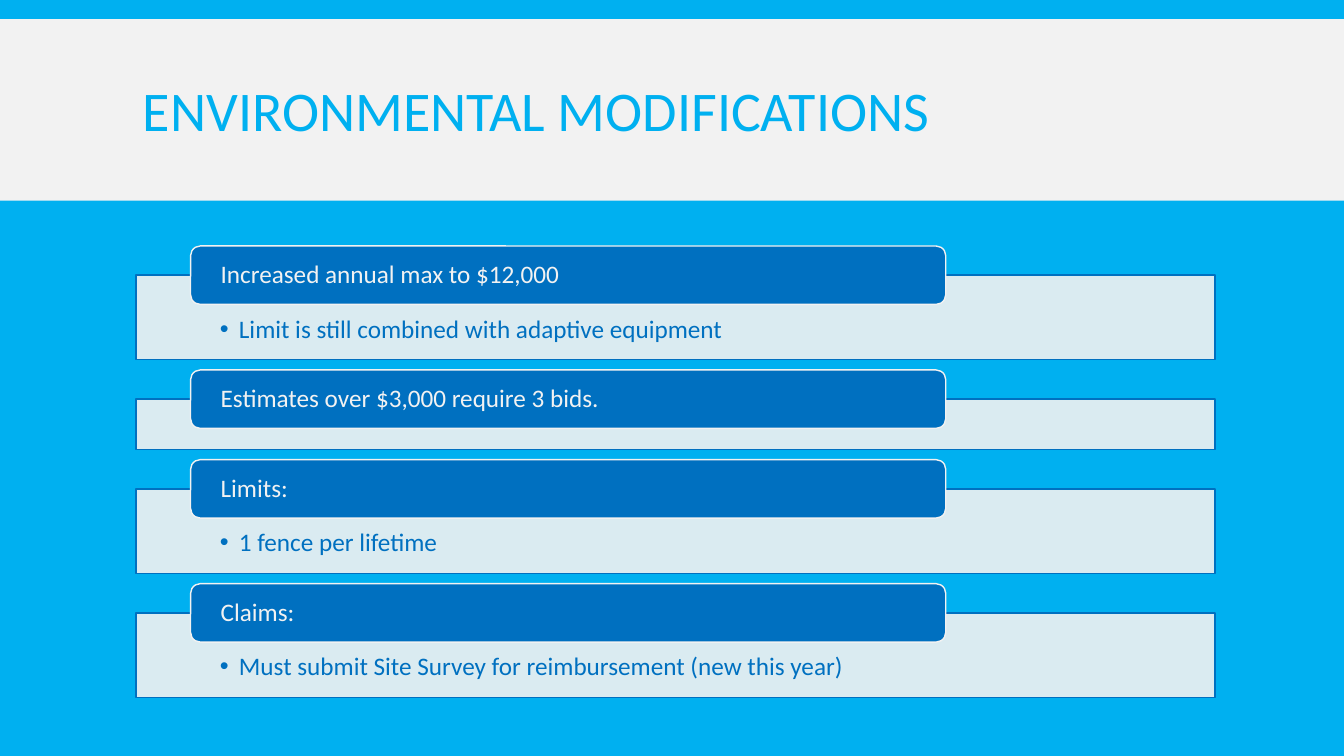
from lxml import etree
from pptx import Presentation
from pptx.dml.color import RGBColor
from pptx.enum.shapes import MSO_SHAPE
from pptx.enum.text import MSO_ANCHOR, PP_ALIGN
from pptx.oxml.ns import qn
from pptx.util import Inches, Pt

RECT, ROUND = MSO_SHAPE.RECTANGLE, MSO_SHAPE.ROUNDED_RECTANGLE
TOP, MIDDLE = MSO_ANCHOR.TOP, MSO_ANCHOR.MIDDLE
LEFT = PP_ALIGN.LEFT

TITLE = "ENVIRONMENTAL MODIFICATIONS"
ITEMS = [
    ("Increased annual max to $12,000",
     "Limit is still combined with adaptive equipment"),
    ("Estimates over $3,000 require 3 bids.", None),
    ("Limits:", "1 fence per lifetime"),
    ("Claims:", "Must submit Site Survey for reimbursement (new this year)"),
]
COLORS = {"sky": "00B0F0", "pale": "F2F2F2", "blue": "0070C0"}
FONT = "Calibri"

BOX_X, BOX_W, FIRST_Y = 1.35, 10.7, 2.73
TALL, SHORT, GAP = 0.84, 0.5, 0.39
TAB_X, TAB_W, TAB_H, RISE = 1.89, 7.49, 0.58, 0.29


def color(name):
    return RGBColor.from_string(COLORS[name])


def add_block(slide, kind, area, fill, line=None):
    block = slide.shapes.add_shape(kind, *map(Inches, area))
    block.shadow.inherit = False
    block.fill.solid()
    block.fill.fore_color.rgb = color(fill)
    if line:
        block.line.color.rgb = color(line)
        block.line.width = Pt(1)
    else:
        block.line.fill.background()
    return block


def set_text(shape, text, size, ink, insets, anchor=MIDDLE, spacing=0.9):
    """Write one left-aligned paragraph; insets run left, top, right, bottom."""
    frame = shape.text_frame
    frame.text = text
    frame.word_wrap = True
    frame.vertical_anchor = anchor
    (frame.margin_left, frame.margin_top,
     frame.margin_right, frame.margin_bottom) = map(Inches, insets)
    para = frame.paragraphs[0]
    para.alignment = LEFT
    para.line_spacing = spacing
    font = para.runs[0].font
    font.name, font.size, font.color.rgb = FONT, Pt(size), color(ink)
    return para


def add_bullet(para):
    props = para._p.get_or_add_pPr()
    props.set("marL", str(Inches(0.19)))
    props.set("indent", str(-Inches(0.19)))
    etree.SubElement(props, qn("a:buFont")).set("typeface", "Arial")
    etree.SubElement(props, qn("a:buChar")).set("char", "•")


def set_alpha(shape, percent):
    tint = shape._element.spPr.find(qn("a:solidFill"))[0]
    etree.SubElement(tint, qn("a:alpha")).set("val", str(percent * 1000))


def add_item(slide, y, height, head, detail):
    box = add_block(slide, RECT, (BOX_X, y, BOX_W, height), "pale", "blue")
    set_alpha(box, 90)
    if detail:
        add_bullet(set_text(box, detail, 18, "blue",
                            (0.83, 0.41, 0.83, 0.14), TOP))
    tab = add_block(slide, ROUND, (TAB_X, y - RISE, TAB_W, TAB_H),
                    "blue", "pale")
    set_text(tab, head, 18, "pale", (0.27, 0, 0.27, 0))


def main():
    deck = Presentation()
    deck.slide_width, deck.slide_height = Inches(13.33), Inches(7.5)
    slide = deck.slides.add_slide(deck.slide_layouts[6])
    slide.background.fill.solid()
    slide.background.fill.fore_color.rgb = color("sky")

    add_block(slide, RECT, (0, 0.19, 13.33, 1.8), "pale")
    title = slide.shapes.add_textbox(*map(Inches, (1.32, 0.31, 10.7, 1.65)))
    set_text(title, TITLE, 40, "sky", (0.1, 0.05, 0.1, 0.05), spacing=0.85)

    y = FIRST_Y
    for head, detail in ITEMS:
        height = TALL if detail else SHORT
        add_item(slide, y, height, head, detail)
        y += height + GAP
    deck.save("out.pptx")


if __name__ == "__main__":
    main()
